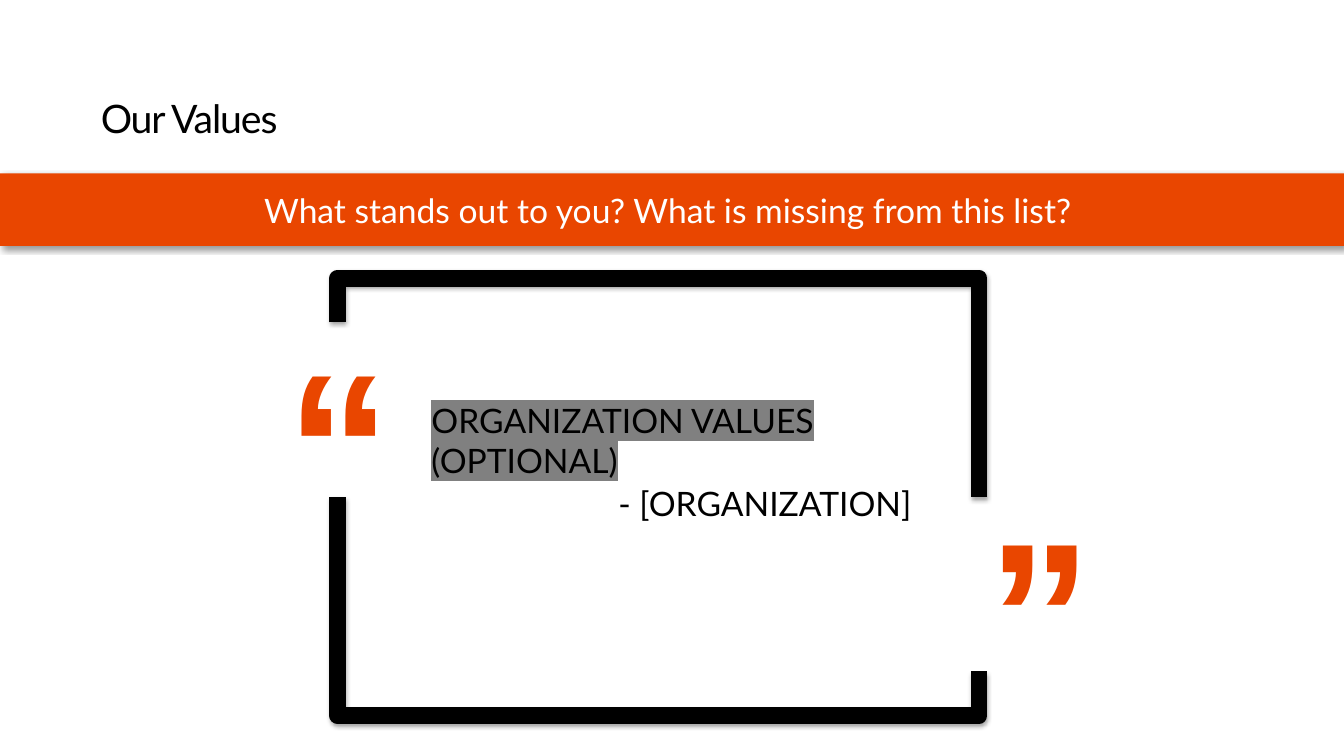
import pptx
import pptx.util
import pptx.dml.color
import pptx.enum.shapes
import pptx.enum.text
import pptx.oxml
import pptx.oxml.ns
from dataclasses import dataclass

Inches = pptx.util.Inches
Pt = pptx.util.Pt
Align = pptx.enum.text.PP_ALIGN
Anchor = pptx.enum.text.MSO_ANCHOR


@dataclass(frozen=True)
class Theme:
    black: str = "000000"
    white: str = "FFFFFF"
    orange: str = "E94600"
    gray: str = "808080"
    body_font: str = "Lato"
    quote_font: str = "Arial"
    title_size: float = 28
    body_size: float = 24
    quote_size: float = 150
    frame_width: float = 12


theme = Theme()


def rgb(value):
    return pptx.dml.color.RGBColor.from_string(value)


def add_text(frame, text, size=theme.body_size, font=theme.body_font, color=theme.black,
             bold=False, align=Align.LEFT, anchor=Anchor.TOP, insets=(0.1, 0.05, 0.1, 0.05),
             before=0, line_spacing=None, spacing=None, highlight=None, new_paragraph=False):
    frame.word_wrap = True
    frame.vertical_anchor = anchor
    frame.margin_left, frame.margin_top, frame.margin_right, frame.margin_bottom = map(Inches, insets)
    paragraph = frame.add_paragraph() if new_paragraph else frame.paragraphs[0]
    paragraph.alignment = align
    paragraph.space_before = Pt(before)
    if line_spacing:
        paragraph.line_spacing = line_spacing
    run = paragraph.add_run()
    run.text = text
    run.font.size = Pt(size)
    run.font.bold = bold
    run.font.color.rgb = rgb(color)
    run.font.name = font
    properties = run._r.get_or_add_rPr()
    if spacing:
        properties.set("spc", str(round(spacing * 100)))
    if highlight:
        mark = pptx.oxml.parse_xml(
            f'<a:highlight {pptx.oxml.ns.nsdecls("a")}><a:srgbClr val="{highlight}"/></a:highlight>')
        properties.find(pptx.oxml.ns.qn("a:latin")).addprevious(mark)


presentation = pptx.Presentation()
presentation.slide_width = Inches(13.33)
presentation.slide_height = Inches(7.5)
slide = presentation.slides.add_slide(presentation.slide_layouts[6])

title = slide.shapes.add_textbox(Inches(1), Inches(0.76), Inches(11.33), Inches(0.65))
add_text(title.text_frame, "Our Values", size=theme.title_size, anchor=Anchor.BOTTOM,
         insets=(0, 0.05, 0, 0), line_spacing=0.9, spacing=-0.8)

banner = slide.shapes.add_shape(pptx.enum.shapes.MSO_SHAPE.RECTANGLE,
                                0, Inches(1.72), Inches(13.33), Inches(0.72))
banner.fill.solid()
banner.fill.fore_color.rgb = rgb(theme.orange)
banner.line.fill.background()
add_text(banner.text_frame, "What stands out to you? What is missing from this list? ",
         color=theme.white, align=Align.CENTER, anchor=Anchor.MIDDLE)

values = slide.shapes.add_textbox(Inches(4.28), Inches(3.96), Inches(4.76), Inches(1.24))
values_format = dict(anchor=Anchor.MIDDLE, insets=(0, 0, 0, 0))
add_text(values.text_frame, "ORGANIZATION VALUES (OPTIONAL)", highlight=theme.gray, **values_format)
add_text(values.text_frame, "- [ORGANIZATION]", align=Align.RIGHT, before=2,
         new_paragraph=True, **values_format)

for mark, left, top in (("“", 2.74, 3.04), ("”", 9.7, 4.72)):
    quote = slide.shapes.add_textbox(Inches(left), Inches(top), Inches(0.8), Inches(2.63))
    add_text(quote.text_frame, mark, size=theme.quote_size, font=theme.quote_font,
             color=theme.orange, bold=True)

left, right, top, middle, bottom, stub = 3.35, 9.71, 2.76, 4.93, 7.1, 0.44
brackets = []
for points in (
    [(left, top + stub), (left, top), (right, top), (right, middle)],
    [(right, bottom - stub), (right, bottom), (left, bottom), (left, middle)],
):
    corners = [(Inches(x), Inches(y)) for x, y in points]
    builder = slide.shapes.build_freeform(*corners[0])
    builder.add_line_segments(corners[1:], close=False)
    bracket = builder.convert_to_shape()
    bracket.fill.background()
    bracket.line.color.rgb = rgb(theme.black)
    bracket.line.width = Pt(theme.frame_width)
    bracket.line._get_or_add_ln().append(
        pptx.oxml.parse_xml(f'<a:round {pptx.oxml.ns.nsdecls("a")}/>'))
    brackets.append(bracket)

bracket_shadow = (35, 3.1, 1.8, 90)
for shape, (opacity, blur, distance, angle) in (
    (banner, (40, 4, 3, 45)),
    (brackets[0], bracket_shadow),
    (brackets[1], bracket_shadow),
):
    shape.shadow.inherit = False
    effects = shape._element.spPr.find(pptx.oxml.ns.qn("a:effectLst"))
    effects.append(pptx.oxml.parse_xml(
        f'<a:outerShdw {pptx.oxml.ns.nsdecls("a")} blurRad="{Pt(blur)}" dist="{Pt(distance)}" '
        f'dir="{angle * 60000}" algn="tl" rotWithShape="0"><a:srgbClr val="{theme.black}">'
        f'<a:alpha val="{opacity * 1000}"/></a:srgbClr></a:outerShdw>'))

presentation.save("out.pptx")
